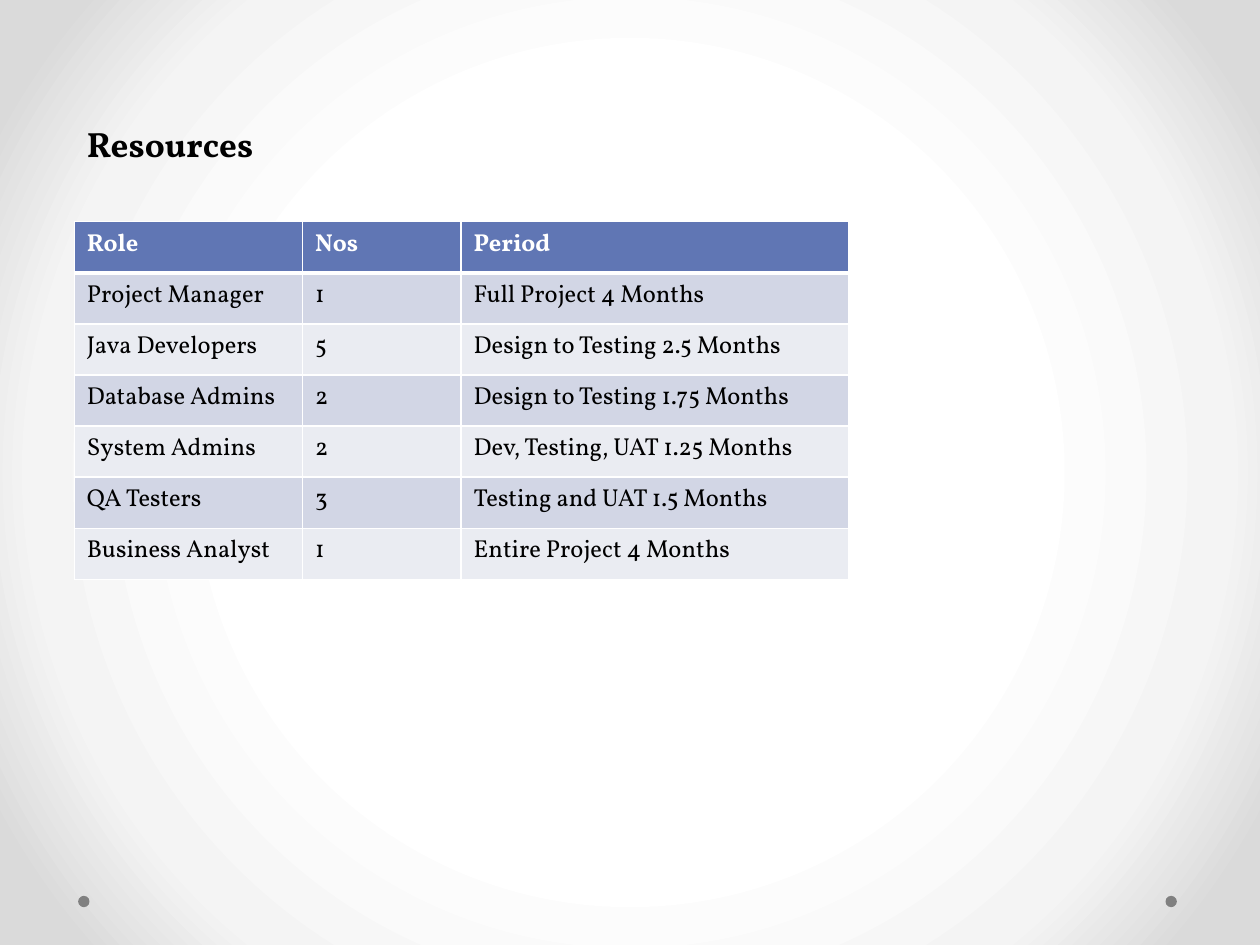
from dataclasses import dataclass

from lxml import etree
from pptx import Presentation
from pptx import util as u
from pptx.dml.color import RGBColor
from pptx.enum import shapes, text
from pptx.oxml import parse_xml
from pptx.oxml.ns import nsdecls, qn


@dataclass(frozen=True)
class Theme:
    font: str = "Vollkorn"
    title_size: int = 20
    table_size: int = 14
    ink: str = "000000"
    white: str = "FFFFFF"
    header: str = "6076B4"
    bands: tuple = ("D2D6E5", "EAECF2")
    dot: str = "808080"
    glow: tuple = ((50, "FFFFFF"), (76, "F4F4F4"), (92, "DADADA"))
    thin: int = 1
    thick: int = 3


THEME = Theme()
WIDTH, HEIGHT = u.Inches(10), u.Inches(7.5)
MARGIN = u.Inches(0.59)
TITLE_TOP, TABLE_TOP = u.Inches(0.92), u.Inches(1.76)
COLUMNS = (1.81, 1.26, 3.08)
TABLE_HEIGHT = u.Inches(2.84)
DOT_SIZE, DOT_TOP = u.Inches(0.09), u.Inches(7.11)
DOT_LEFTS = (0.62, 9.25)

ROLES = (
    ("Role", "Nos", "Period"),
    ("Project Manager", "1", "Full Project 4 Months"),
    ("Java Developers", "5", "Design to Testing 2.5 Months"),
    ("Database Admins", "2", "Design to Testing 1.75 Months"),
    ("System Admins", "2", "Dev, Testing, UAT 1.25 Months"),
    ("QA Testers", "3", "Testing and UAT 1.5 Months"),
    ("Business Analyst", "1", "Entire Project 4 Months"),
)


def write(frame, words, size, color=THEME.ink, bold=False):
    frame.word_wrap = True
    run = frame.paragraphs[0].add_run()
    run.text = words
    run.font.name = THEME.font
    run.font.size = u.Pt(size)
    run.font.bold = bold
    run.font.color.rgb = RGBColor.from_string(color)


def paint(fill, color):
    fill.solid()
    fill.fore_color.rgb = RGBColor.from_string(color)


def set_background(slide):
    slide.background.fill.gradient()
    gradient = slide.element.find(".//" + qn("a:gradFill"))
    stops = "".join(
        f'<a:gs pos="{share * 1000}"><a:srgbClr val="{color}"/></a:gs>'
        for share, color in THEME.glow
    )
    glow = parse_xml(
        f'<a:gradFill {nsdecls("a")} rotWithShape="1"><a:gsLst>{stops}</a:gsLst>'
        '<a:path path="circle"><a:fillToRect l="50000" t="50000" r="50000" b="50000"/>'
        "</a:path></a:gradFill>"
    )
    gradient.getparent().replace(gradient, glow)


def add_dot(slide, left):
    dot = slide.shapes.add_shape(
        shapes.MSO_SHAPE.OVAL, u.Inches(left), DOT_TOP, DOT_SIZE, DOT_SIZE
    )
    dot.shadow.inherit = False
    paint(dot.fill, THEME.dot)
    dot.line.fill.background()


def add_title(slide, words):
    box = slide.shapes.add_textbox(
        MARGIN, TITLE_TOP, WIDTH - 2 * MARGIN, TABLE_TOP - TITLE_TOP
    )
    box.text_frame.vertical_anchor = text.MSO_ANCHOR.TOP
    write(box.text_frame, words, THEME.title_size, bold=True)


def set_borders(cell, top, bottom):
    properties = cell._tc.get_or_add_tcPr()
    widths = {"lnL": THEME.thin, "lnR": THEME.thin, "lnT": top, "lnB": bottom}
    for side, width in widths.items():
        line = etree.SubElement(properties, qn(f"a:{side}"), w=str(u.Pt(width)))
        fill = etree.SubElement(line, qn("a:solidFill"))
        etree.SubElement(fill, qn("a:srgbClr"), val=THEME.white)


def add_table(slide, rows):
    table = slide.shapes.add_table(
        len(rows), len(COLUMNS), MARGIN, TABLE_TOP,
        u.Inches(sum(COLUMNS)), TABLE_HEIGHT,
    ).table
    table.horz_banding = False
    for column, width in zip(table.columns, COLUMNS):
        column.width = u.Inches(width)
    for i, row in enumerate(rows):
        is_header = i == 0
        top = THEME.thick if i == 1 else THEME.thin
        bottom = THEME.thick if is_header else THEME.thin
        for j, words in enumerate(row):
            cell = table.cell(i, j)
            set_borders(cell, top, bottom)
            paint(cell.fill, THEME.header if is_header else THEME.bands[(i - 1) % 2])
            write(
                cell.text_frame, words, THEME.table_size,
                color=THEME.white if is_header else THEME.ink, bold=is_header,
            )


def main():
    presentation = Presentation()
    presentation.slide_width, presentation.slide_height = WIDTH, HEIGHT
    slide = presentation.slides.add_slide(presentation.slide_layouts[6])
    set_background(slide)
    for left in DOT_LEFTS:
        add_dot(slide, left)
    add_title(slide, "Resources")
    add_table(slide, ROLES)
    presentation.save("out.pptx")


if __name__ == "__main__":
    main()
